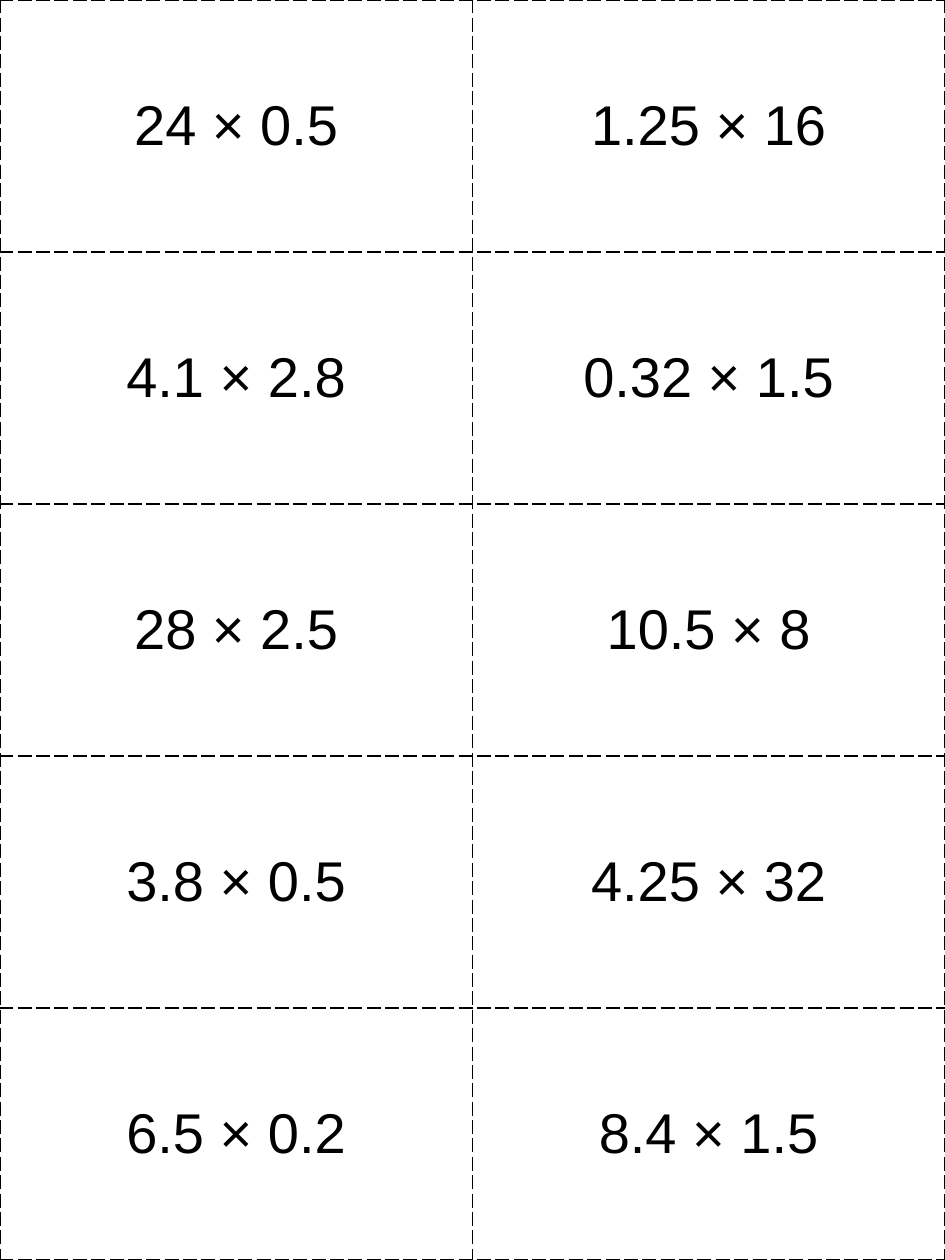
import lxml.etree
import pptx
import pptx.dml.color
import pptx.enum.text
import pptx.oxml.ns
import pptx.util

PX = 9525  # EMU per px, 96 px to the inch
WIDTH, HEIGHT = 720, 960

THEME = {
    "font": "Arial",
    "size": 32,
    "ink": "000000",
    "border_width": 1,
    "border_dash": "lgDash",
}

CARDS = [
    ("24 × 0.5", "1.25 × 16"),
    ("4.1 × 2.8", "0.32 × 1.5"),
    ("28 × 2.5", "10.5 × 8"),
    ("3.8 × 0.5", "4.25 × 32"),
    ("6.5 × 0.2", "8.4 × 1.5"),
]


def add_cut_lines(cell):
    """Give all four sides of the cell a dashed border."""
    properties = cell._tc.get_or_add_tcPr()
    qn = pptx.oxml.ns.qn
    for position, side in enumerate(("a:lnL", "a:lnR", "a:lnT", "a:lnB")):
        line = lxml.etree.Element(qn(side), w=str(pptx.util.Pt(THEME["border_width"])))
        fill = lxml.etree.SubElement(line, qn("a:solidFill"))
        lxml.etree.SubElement(fill, qn("a:srgbClr"), val=THEME["ink"])
        lxml.etree.SubElement(line, qn("a:prstDash"), val=THEME["border_dash"])
        properties.insert(position, line)


presentation = pptx.Presentation()
presentation.slide_width = WIDTH * PX
presentation.slide_height = HEIGHT * PX
slide = presentation.slides.add_slide(presentation.slide_layouts[6])

table = slide.shapes.add_table(
    len(CARDS), len(CARDS[0]), 0, 0, WIDTH * PX, HEIGHT * PX
).table
table.first_row = False
table.horz_banding = False

for row, products in enumerate(CARDS):
    for column, product in enumerate(products):
        cell = table.cell(row, column)
        cell.fill.background()
        add_cut_lines(cell)
        cell.vertical_anchor = pptx.enum.text.MSO_ANCHOR.MIDDLE
        paragraph = cell.text_frame.paragraphs[0]
        paragraph.text = product
        paragraph.alignment = pptx.enum.text.PP_ALIGN.CENTER
        font = paragraph.runs[0].font
        font.name = THEME["font"]
        font.size = pptx.util.Pt(THEME["size"])
        font.color.rgb = pptx.dml.color.RGBColor.from_string(THEME["ink"])

presentation.save("out.pptx")
